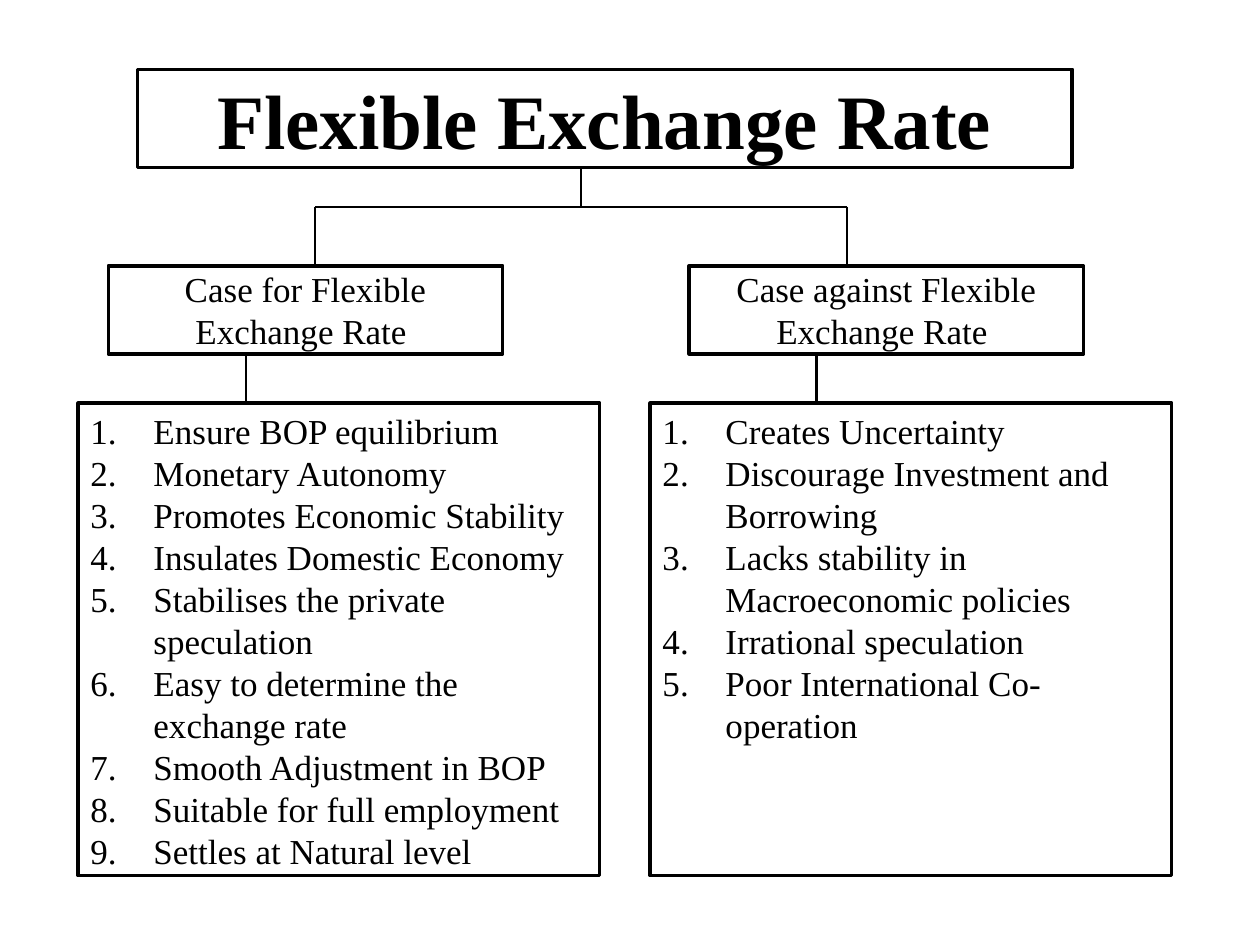
from lxml.etree import SubElement
from pptx import Presentation
from pptx.dml.color import RGBColor
from pptx.enum.shapes import MSO_CONNECTOR, MSO_SHAPE
from pptx.enum.text import MSO_ANCHOR, PP_ALIGN
from pptx.oxml.ns import qn
from pptx.util import Inches, Pt

FONT = "Times New Roman"
BLACK, WHITE = "000000", "FFFFFF"
TITLE = "Flexible Exchange Rate"
# heading left, list left, branch x, stem x, then the wording
CASES = [
    (0.86, 0.62, 2.5, 1.95, "Case for Flexible Exchange Rate ", [
        "Ensure BOP equilibrium",
        "Monetary Autonomy",
        "Promotes Economic Stability",
        "Insulates Domestic Economy",
        "Stabilises the private speculation",
        "Easy to determine the exchange rate",
        "Smooth Adjustment in BOP",
        "Suitable for full employment",
        "Settles at Natural level",
    ]),
    (5.47, 5.16, 6.72, 6.48, "Case against Flexible Exchange Rate ", [
        "Creates Uncertainty",
        "Discourage Investment and Borrowing",
        "Lacks stability in Macroeconomic policies",
        "Irrational speculation",
        "Poor International Co-operation",
    ]),
]
TITLE_TOP, TITLE_H = 0.55, 0.78
TRUNK_X, FORK_Y = 4.61, 1.64
HEAD_TOP, HEAD_W, HEAD_H = 2.11, 3.13, 0.7
LIST_TOP, LIST_W, LIST_H = 3.2, 4.14, 3.75


def color(hex_code):
    return RGBColor.from_string(hex_code)


def number(paragraph):
    """Turn a paragraph into an automatically numbered item."""
    props = paragraph._p.get_or_add_pPr()
    props.set("marL", str(Inches(0.5)))
    props.set("indent", str(Inches(-0.5)))
    SubElement(props, qn("a:buFont"), typeface="+mj-lt")
    SubElement(props, qn("a:buAutoNum"), type="arabicPeriod")


def add_box(slide, place, lines, size=20, bold=False, numbered=False):
    box = slide.shapes.add_shape(MSO_SHAPE.RECTANGLE, *map(Inches, place))
    box.shadow.inherit = False
    box.fill.solid()
    box.fill.fore_color.rgb = color(WHITE)
    box.line.color.rgb = color(BLACK)
    box.line.width = Pt(2)
    frame = box.text_frame
    frame.word_wrap = True
    frame.vertical_anchor = MSO_ANCHOR.TOP if numbered else MSO_ANCHOR.MIDDLE
    for i, line in enumerate(lines):
        paragraph = frame.add_paragraph() if i else frame.paragraphs[0]
        paragraph.alignment = PP_ALIGN.LEFT if numbered else PP_ALIGN.CENTER
        if numbered:
            number(paragraph)
        run = paragraph.add_run()
        run.text = line
        run.font.name, run.font.size, run.font.bold = FONT, Pt(size), bold
        run.font.color.rgb = color(BLACK)


def add_line(slide, *ends):
    line = slide.shapes.add_connector(MSO_CONNECTOR.STRAIGHT, *map(Inches, ends))
    line.line.color.rgb = color(BLACK)
    line.line.width = Pt(1.25)
    SubElement(line._element.spPr, qn("a:effectLst"))


def main():
    deck = Presentation()
    deck.slide_width, deck.slide_height = Inches(10), Inches(7.5)
    slide = deck.slides.add_slide(deck.slide_layouts[6])

    add_box(slide, (1.09, TITLE_TOP, 7.42, TITLE_H), [TITLE], size=44, bold=True)
    add_line(slide, TRUNK_X, TITLE_TOP + TITLE_H, TRUNK_X, FORK_Y)
    for head_x, list_x, branch_x, stem_x, heading, points in CASES:
        add_line(slide, branch_x, FORK_Y, TRUNK_X, FORK_Y)
        add_line(slide, branch_x, FORK_Y, branch_x, HEAD_TOP)
        add_box(slide, (head_x, HEAD_TOP, HEAD_W, HEAD_H), [heading])
        add_line(slide, stem_x, HEAD_TOP + HEAD_H, stem_x, LIST_TOP)
        add_box(slide, (list_x, LIST_TOP, LIST_W, LIST_H), points, numbered=True)

    deck.save("out.pptx")


if __name__ == "__main__":
    main()
